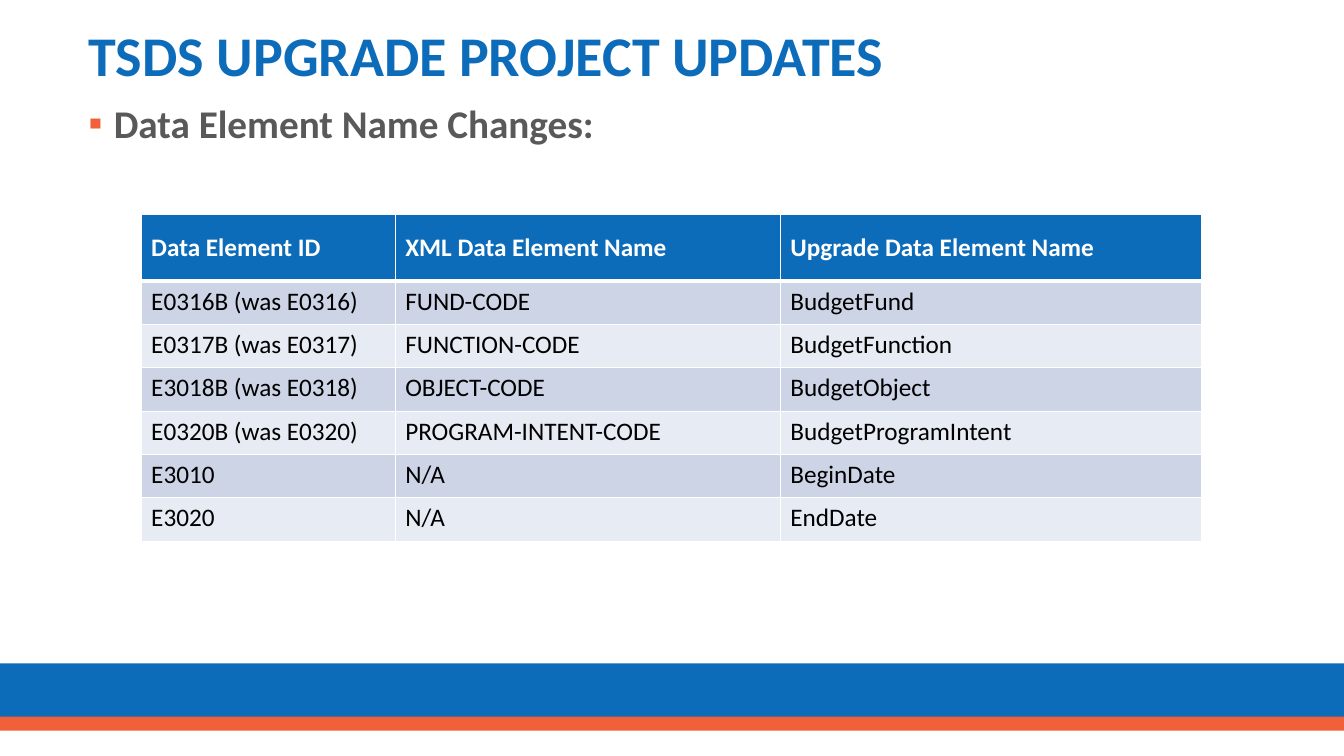
from lxml import etree
from pptx import Presentation
from pptx.dml.color import RGBColor
from pptx.enum.shapes import MSO_SHAPE
from pptx.enum.text import MSO_ANCHOR
from pptx.oxml.ns import qn
from pptx.util import Inches, Pt

RECT = MSO_SHAPE.RECTANGLE
TOP, MIDDLE = MSO_ANCHOR.TOP, MSO_ANCHOR.MIDDLE
FONT = "Calibri"
COLORS = {
    "blue": "0D6CB9",
    "orange": "F16038",
    "gray": "595959",
    "black": "000000",
    "white": "FFFFFF",
    "band_dark": "CCD4E6",
    "band_light": "E7EBF3",
}
COL_WIDTHS = [2.52, 3.82, 4.18]
HEADER_HEIGHT, ROW_HEIGHT = 0.66, 0.43
ROWS = [
    ["Data Element ID", "XML Data Element Name", "Upgrade Data Element Name"],
    ["E0316B (was E0316)", "FUND-CODE", "BudgetFund"],
    ["E0317B (was E0317)", "FUNCTION-CODE", "BudgetFunction"],
    ["E3018B (was E0318)", "OBJECT-CODE", "BudgetObject"],
    ["E0320B (was E0320)", "PROGRAM-INTENT-CODE", "BudgetProgramIntent"],
    ["E3010", "N/A", "BeginDate"],
    ["E3020", "N/A", "EndDate"],
]


def rgb(name):
    """Return the named palette colour."""
    return RGBColor.from_string(COLORS[name])


def write(tf, text, size=18, color="black", bold=False, spacing=None, bullet=None):
    """Write one formatted paragraph into a text frame."""
    p = tf.paragraphs[0]
    if bullet:
        add_bullet(p, bullet)
    if spacing:
        p.line_spacing = spacing
    r = p.add_run()
    r.text = text
    r.font.name = FONT
    r.font.size = Pt(size)
    r.font.bold = bold
    r.font.color.rgb = rgb(color)


def add_bullet(p, char):
    """Give a paragraph an orange bullet with a hanging indent."""
    pPr = p._p.get_or_add_pPr()
    pPr.set("marL", str(Inches(0.25)))
    pPr.set("indent", str(-Inches(0.25)))
    clr = etree.SubElement(pPr, qn("a:buClr"))
    etree.SubElement(clr, qn("a:srgbClr")).set("val", COLORS["orange"])
    etree.SubElement(pPr, qn("a:buFont")).set("typeface", "Wingdings" if char == "§" else FONT)
    etree.SubElement(pPr, qn("a:buChar")).set("char", char)


def add_text(s, box, text, anchor=TOP, **fmt):
    """Add a wrapping text box holding one paragraph."""
    tf = s.shapes.add_textbox(*map(Inches, box)).text_frame
    tf.word_wrap = True
    tf.vertical_anchor = anchor
    write(tf, text, **fmt)


def add_band(s, box, color):
    """Add a plain filled band."""
    sp = s.shapes.add_shape(RECT, *map(Inches, box))
    sp.shadow.inherit = False
    sp.fill.solid()
    sp.fill.fore_color.rgb = rgb(color)
    sp.line.fill.background()


def add_footer(s, left, top, width):
    """Add the blue footer with its orange stripe."""
    add_band(s, (left, top, width, 0.58), "blue")
    add_band(s, (left, top + 0.53, width, 0.14), "orange")


def set_borders(cell, top=1, bottom=1):
    """Draw white cell borders with the given top and bottom widths."""
    tcPr = cell._tc.get_or_add_tcPr()
    widths = {"a:lnL": 1, "a:lnR": 1, "a:lnT": top, "a:lnB": bottom}
    for i, (tag, width) in enumerate(widths.items()):
        ln = etree.Element(qn(tag), w=str(Pt(width)))
        fill = etree.SubElement(ln, qn("a:solidFill"))
        etree.SubElement(fill, qn("a:srgbClr")).set("val", COLORS["white"])
        tcPr.insert(i, ln)


def add_name_table(s, left, top):
    """Add the table of element names with a header and banded rows."""
    heights = [HEADER_HEIGHT] + [ROW_HEIGHT] * (len(ROWS) - 1)
    box = (left, top, sum(COL_WIDTHS), sum(heights))
    table = s.shapes.add_table(len(ROWS), len(COL_WIDTHS), *map(Inches, box)).table
    for col, width in zip(table.columns, COL_WIDTHS):
        col.width = Inches(width)
    for i, (row, height, texts) in enumerate(zip(table.rows, heights, ROWS)):
        row.height = Inches(height)
        header = i == 0
        band = "blue" if header else "band_dark" if i % 2 else "band_light"
        for cell, text in zip(row.cells, texts):
            cell.fill.solid()
            cell.fill.fore_color.rgb = rgb(band)
            cell.vertical_anchor = MIDDLE if header else TOP
            set_borders(cell, top=3 if i == 1 else 1, bottom=3 if header else 1)
            write(cell.text_frame, text, color="white" if header else "black", bold=header)


def main():
    """Build and save the slide."""
    prs = Presentation()
    prs.slide_width, prs.slide_height = Inches(13.33), Inches(7.5)
    s = prs.slides.add_slide(prs.slide_layouts[6])
    add_footer(s, 0, 6.58, 13.33)
    add_text(s, (0.78, 0.17, 12.16, 0.82), "TSDS UPGRADE PROJECT UPDATES",
             anchor=MIDDLE, size=40, color="blue", bold=True, spacing=0.9)
    add_text(s, (0.78, 0.99, 11.62, 5.41), "Data Element Name Changes:",
             size=28, color="gray", bold=True, spacing=0.9, bullet="▪")
    add_name_table(s, 1.4, 2.13)
    prs.save("out.pptx")


if __name__ == "__main__":
    main()
